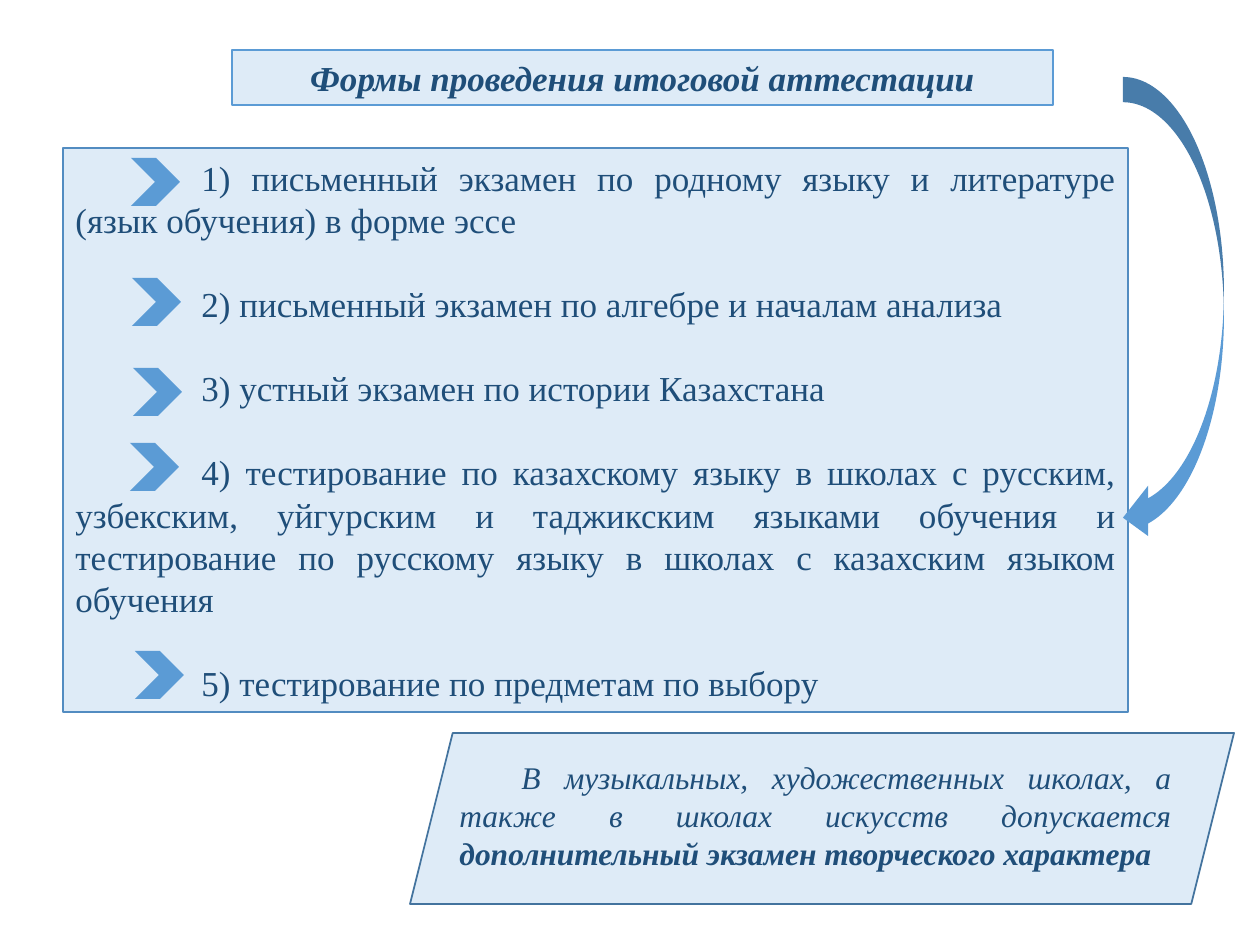
from dataclasses import dataclass

import pptx
import pptx.dml.color
import pptx.enum.shapes
import pptx.enum.text
import pptx.util

EMU_PER_PX = 914400 / 126
FONT = "Times New Roman"
INK = "1F4E79"
PALE = "DEEBF7"
BLUE = "5B9BD5"
SHAPE = pptx.enum.shapes.MSO_SHAPE
ALIGN = pptx.enum.text.PP_ALIGN
ANCHOR = pptx.enum.text.MSO_ANCHOR


@dataclass(frozen=True)
class Box:
    left: int
    top: int
    width: int
    height: int

    def emu(self) -> list[int]:
        return [px(n) for n in (self.left, self.top, self.width, self.height)]


@dataclass(frozen=True)
class Item:
    text: str
    chevron_left: int
    chevron_top: int


ITEMS = [
    Item("1) письменный экзамен по родному языку и литературе "
         "(язык обучения) в форме эссе", 131, 158),
    Item("2) письменный экзамен по алгебре и началам анализа", 132, 278),
    Item("3) устный экзамен по истории Казахстана", 133, 368),
    Item("4) тестирование по казахскому языку в школах с русским, узбекским, "
         "уйгурским и таджикским языками обучения и тестирование по русскому "
         "языку в школах с казахским языком обучения", 130, 443),
    Item("5) тестирование по предметам по выбору", 135, 651),
]


def px(length: int) -> int:
    return round(length * EMU_PER_PX)


def color(value: str) -> pptx.dml.color.RGBColor:
    return pptx.dml.color.RGBColor.from_string(value)


def add_shape(page, kind, box: Box, fill: str, line: str | None = None,
              line_width: float = 0.75):
    shape = page.shapes.add_shape(kind, *box.emu())
    shape.shadow.inherit = False
    shape.fill.solid()
    shape.fill.fore_color.rgb = color(fill)
    if line:
        shape.line.color.rgb = color(line)
        shape.line.width = pptx.util.Pt(line_width)
    else:
        shape.line.fill.background()
    return shape


def prepare_frame(shape, anchor=ANCHOR.TOP):
    frame = shape.text_frame
    frame.word_wrap = True
    frame.vertical_anchor = anchor
    return frame


def format_para(para, align, indent: int = 0, space_before: int = 0):
    para.alignment = align
    para.space_before = pptx.util.Pt(space_before)
    if indent:
        properties = para._p.get_or_add_pPr()
        properties.set("marL", "0")
        properties.set("indent", str(px(indent)))


def add_text(para, text: str, size: int = 20, bold: bool = False,
             italic: bool = False):
    span = para.add_run()
    span.text = text
    span.font.name = FONT
    span.font.size = pptx.util.Pt(size)
    span.font.bold = bold
    span.font.italic = italic
    span.font.color.rgb = color(INK)


def add_exam_list(page):
    panel = add_shape(page, SHAPE.RECTANGLE, Box(63, 148, 1065, 564),
                      PALE, "528CC1")
    frame = prepare_frame(panel, ANCHOR.MIDDLE)
    for index, item in enumerate(ITEMS):
        para = frame.add_paragraph() if index else frame.paragraphs[0]
        format_para(para, ALIGN.JUSTIFY, indent=126,
                    space_before=24 if index else 0)
        add_text(para, item.text)


def add_title(page):
    title = add_shape(page, SHAPE.RECTANGLE, Box(232, 50, 821, 55), PALE, BLUE)
    para = prepare_frame(title).paragraphs[0]
    format_para(para, ALIGN.CENTER)
    add_text(para, "Формы проведения итоговой аттестации",
             bold=True, italic=True)


def add_note(page):
    add_shape(page, SHAPE.PARALLELOGRAM, Box(410, 733, 824, 171),
              PALE, "43739E", 1)
    note = page.shapes.add_textbox(*Box(447, 752, 737, 127).emu())
    para = prepare_frame(note).paragraphs[0]
    format_para(para, ALIGN.JUSTIFY, indent=62)
    add_text(para, "В музыкальных, художественных школах, а также в школах "
             "искусств допускается ", size=18, italic=True)
    add_text(para, "дополнительный экзамен творческого характера",
             size=18, bold=True, italic=True)


def main():
    deck = pptx.Presentation()
    deck.slide_width = px(1260)
    deck.slide_height = px(945)
    page = deck.slides.add_slide(deck.slide_layouts[6])
    add_exam_list(page)
    add_title(page)
    add_note(page)
    add_shape(page, SHAPE.CURVED_LEFT_ARROW, Box(1123, 77, 101, 466), BLUE)
    for item in ITEMS:
        add_shape(page, SHAPE.CHEVRON,
                  Box(item.chevron_left, item.chevron_top, 49, 48), BLUE)
    deck.save("out.pptx")


if __name__ == "__main__":
    main()
